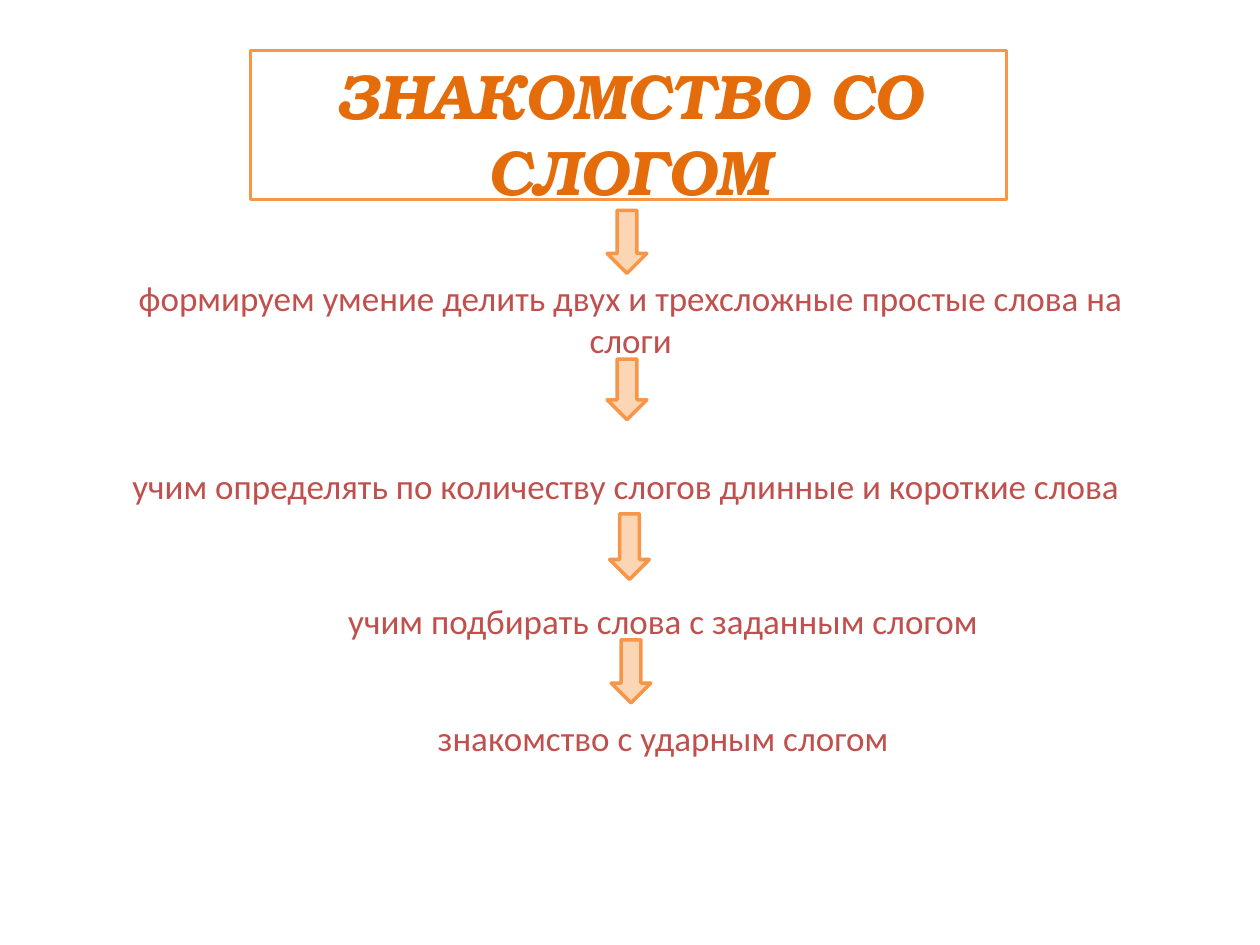
import pptx
import pptx.util
import pptx.dml.color
import pptx.enum.shapes
import pptx.enum.text
from dataclasses import dataclass

Cm = pptx.util.Cm
Pt = pptx.util.Pt
Color = pptx.dml.color.RGBColor.from_string
Shape = pptx.enum.shapes.MSO_SHAPE
Anchor = pptx.enum.text.MSO_ANCHOR
Align = pptx.enum.text.PP_ALIGN


@dataclass(frozen=True)
class Theme:
    paper: str = "FFFFFF"
    outline: str = "F79646"
    arrow: str = "FCD5B5"
    title: str = "E46C0A"
    body: str = "C0504D"
    title_font: str = "TeX Gyre Bonum"
    body_font: str = "Calibri"
    title_size: int = 36
    body_size: int = 20
    outline_width: int = 2


THEME = Theme()
TITLE_FORMAT = {"name": THEME.title_font, "size": Pt(THEME.title_size),
                "bold": True, "italic": True}
BODY_FORMAT = {"name": THEME.body_font, "size": Pt(THEME.body_size)}

# Steps: text, (left, top, width, height) in cm, anchor
STEPS = [
    ("формируем умение делить двух и трехсложные простые слова на слоги",
     (2.34, 5.44, 20.75, 1.96), Anchor.TOP),
    ("учим определять по количеству слогов длинные и короткие слова ",
     (1.4, 8.89, 22.6, 1.45), Anchor.BOTTOM),
    ("учим подбирать слова с заданным слогом",
     (5.05, 11.61, 16.64, 1.45), Anchor.BOTTOM),
    ("знакомство с ударным слогом",
     (5.05, 13.97, 16.64, 1.45), Anchor.BOTTOM),
]

# Arrows between the steps: left, top, height in cm
ARROW_WIDTH = 0.8
ARROWS = [(12.24, 4.24, 1.27), (12.24, 7.24, 1.22),
          (12.29, 10.36, 1.32), (12.32, 12.9, 1.27)]


def write_text(box, text, anchor, formats, color):
    frame = box.text_frame
    frame.word_wrap = True
    frame.vertical_anchor = anchor
    paragraph = frame.paragraphs[0]
    paragraph.alignment = Align.CENTER
    span = paragraph.add_run()
    span.text = text
    for name, value in formats.items():
        setattr(span.font, name, value)
    span.font.color.rgb = Color(color)


def add_outlined(page, kind, place, fill):
    shape = page.shapes.add_shape(kind, *map(Cm, place))
    shape.shadow.inherit = False
    shape.fill.solid()
    shape.fill.fore_color.rgb = Color(fill)
    shape.line.color.rgb = Color(THEME.outline)
    shape.line.width = Pt(THEME.outline_width)
    return shape


def add_step(page, text, place, anchor):
    box = page.shapes.add_textbox(*map(Cm, place))
    write_text(box, text, anchor, BODY_FORMAT, THEME.body)


def main():
    deck = pptx.Presentation()
    deck.slide_width, deck.slide_height = Cm(25.4), Cm(19.05)
    page = deck.slides.add_slide(deck.slide_layouts[6])

    # Framed title
    title = add_outlined(page, Shape.RECTANGLE, (5.05, 1.02, 15.24, 3), THEME.paper)
    write_text(title, "ЗНАКОМСТВО СО СЛОГОМ", Anchor.TOP, TITLE_FORMAT, THEME.title)

    # Each arrow leads to the step below it
    for (left, top, height), step in zip(ARROWS, STEPS):
        add_step(page, *step)
        add_outlined(page, Shape.DOWN_ARROW, (left, top, ARROW_WIDTH, height),
                     THEME.arrow)

    deck.save("out.pptx")


if __name__ == "__main__":
    main()
